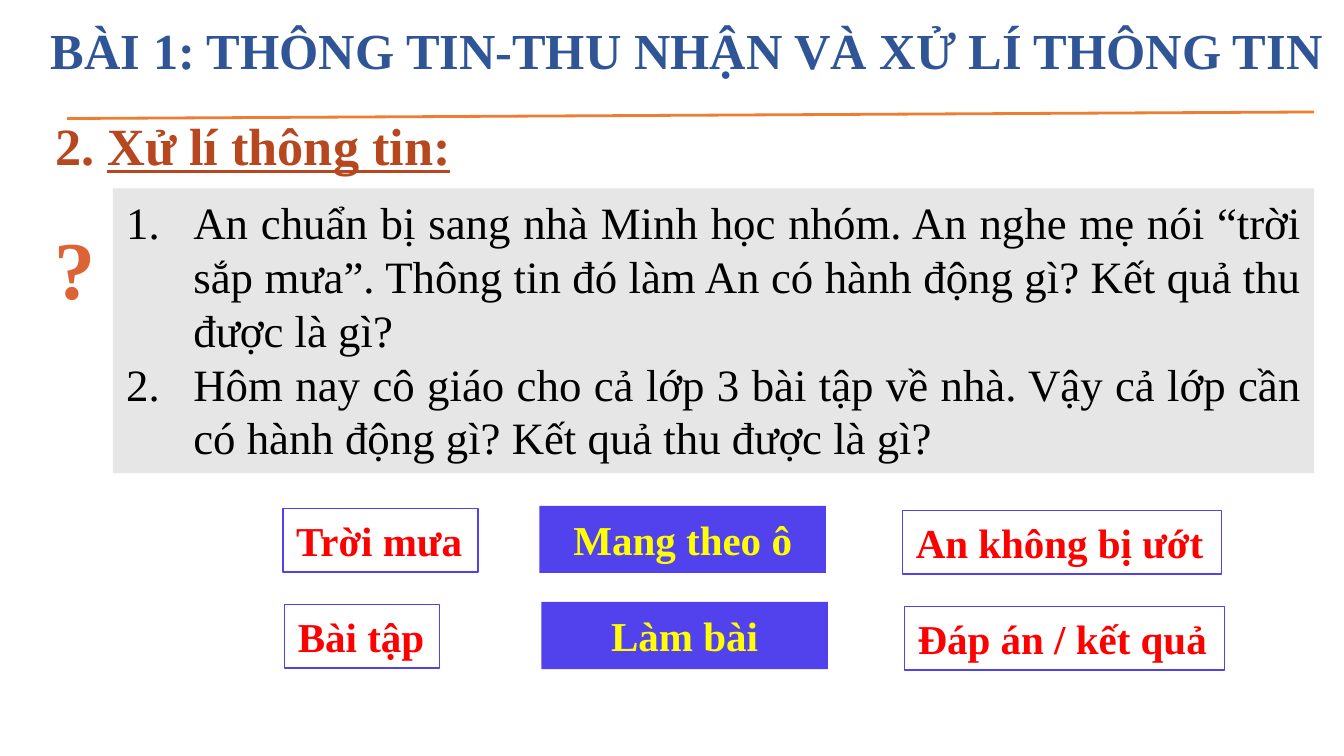
"""Build the slide on processing information, with two questions and their answers."""
from lxml import etree
from pptx import Presentation
from pptx.dml.color import RGBColor
from pptx.enum.shapes import MSO_CONNECTOR as Connector, MSO_SHAPE as Shape
from pptx.enum.text import MSO_ANCHOR as Anchor, PP_ALIGN as Align
from pptx.oxml.ns import qn
from pptx.util import Pt

TITLE_BLUE = RGBColor(0x2F, 0x55, 0x97)
RULE_ORANGE = RGBColor(0xED, 0x7D, 0x31)
HEADING_RUST = RGBColor(0xB7, 0x47, 0x1F)
MARK_ORANGE = RGBColor(0xDD, 0x62, 0x36)
PANEL_GRAY = RGBColor(0xE7, 0xE6, 0xE6)
VIOLET = RGBColor(0x52, 0x42, 0xEE)
RED = RGBColor(0xFF, 0x00, 0x00)
YELLOW = RGBColor(0xFF, 0xFF, 0x00)
BLACK = RGBColor(0x00, 0x00, 0x00)


def add_box(left, top, width, height, fill=None, line=None):
    shape = slide.shapes.add_shape(Shape.RECTANGLE, Pt(left), Pt(top), Pt(width), Pt(height))
    shape.shadow.inherit = False
    shape.text_frame.vertical_anchor = Anchor.TOP
    for part, color in ((shape.fill, fill), (shape.line.fill, line)):
        if color is None:
            part.background()
        else:
            part.solid()
            part.fore_color.rgb = color
    if line is not None:
        shape.line.width = Pt(0.75)
    return shape


def write(shape, texts, size, color, bold=True, align=Align.LEFT, wrap=True):
    frame = shape.text_frame
    frame.word_wrap = wrap
    for index, text in enumerate(texts):
        paragraph = frame.add_paragraph() if index else frame.paragraphs[0]
        paragraph.add_run().text = text
        paragraph.alignment = align
        paragraph.font.name = "Times New Roman"
        paragraph.font.size = Pt(size)
        paragraph.font.bold = bold
        paragraph.font.color.rgb = color
    return frame


presentation = Presentation()
presentation.slide_width, presentation.slide_height = Pt(720), Pt(405)
slide = presentation.slides.add_slide(presentation.slide_layouts[6])

rule = slide.shapes.add_connector(Connector.STRAIGHT, Pt(36), Pt(63.5), Pt(704), Pt(60))
rule.line.color.rgb = RULE_ORANGE
rule.line.width = Pt(1.5)
etree.SubElement(rule._element.spPr, qn("a:effectLst"))

heading = slide.shapes.add_textbox(Pt(22.5), Pt(61), Pt(506), Pt(38))
paragraph = write(heading, ["2. "], 28, HEADING_RUST).paragraphs[0]
paragraph.line_spacing = 0.9
paragraph.space_before = Pt(7.5)
underlined = paragraph.add_run()
underlined.text = "Xử lí thông tin:"
underlined.font.underline = True

question_mark = slide.shapes.add_textbox(Pt(3.5), Pt(113), Pt(73), Pt(60.5))
write(question_mark, ["?"], 44, MARK_ORANGE, align=Align.CENTER)

questions = [
    "An chuẩn bị sang nhà Minh học nhóm. An nghe mẹ nói “trời sắp mưa”. "
    "Thông tin đó làm An có hành động gì? Kết quả thu được là gì?",
    "Hôm nay cô giáo cho cả lớp 3 bài tập về nhà. "
    "Vậy cả lớp cần có hành động gì? Kết quả thu được là gì?",
]
panel = add_box(60.5, 101, 643.5, 152.5, fill=PANEL_GRAY)
frame = write(panel, questions, 24, BLACK, bold=False, align=Align.JUSTIFY)
for paragraph in frame.paragraphs:
    properties = paragraph._p.get_or_add_pPr()
    properties.set("marL", str(Pt(36)))
    properties.set("indent", str(-Pt(36)))
    etree.SubElement(properties, qn("a:buFont")).set("typeface", "+mj-lt")
    etree.SubElement(properties, qn("a:buAutoNum")).set("type", "arabicPeriod")
    properties.append(properties.find(qn("a:defRPr")))

title = slide.shapes.add_textbox(Pt(23), Pt(10), Pt(690), Pt(65.5))
frame = write(title, ["BÀI 1: THÔNG TIN-THU NHẬN VÀ XỬ LÍ THÔNG TIN"], 27, TITLE_BLUE, align=Align.CENTER)
frame.margin_left = frame.margin_top = frame.margin_right = frame.margin_bottom = 0

answer_rows = [
    (0, 0, ("Trời mưa", 104.5), "Mang theo ô", ("An không bị ướt", 171)),
    (1, 51.5, ("Bài tập", 83), "Làm bài", ("Đáp án / kết quả", 171.5)),
]
for shift, drop, (given, given_width), action, (result, result_width) in answer_rows:
    given_box = add_box(151.5 + shift, 272.5 + drop, given_width, 34, line=VIOLET)
    write(given_box, [given], 22, RED, wrap=False)
    result_box = add_box(483.5 + shift, 273.5 + drop, result_width, 34, line=VIOLET)
    write(result_box, [result], 22, RED, wrap=False)
    action_box = add_box(289 + shift, 271 + drop, 153.5, 36, fill=VIOLET)
    frame = write(action_box, [action], 22, YELLOW, align=Align.CENTER, wrap=False)
    frame.vertical_anchor = Anchor.MIDDLE

presentation.save("out.pptx")
